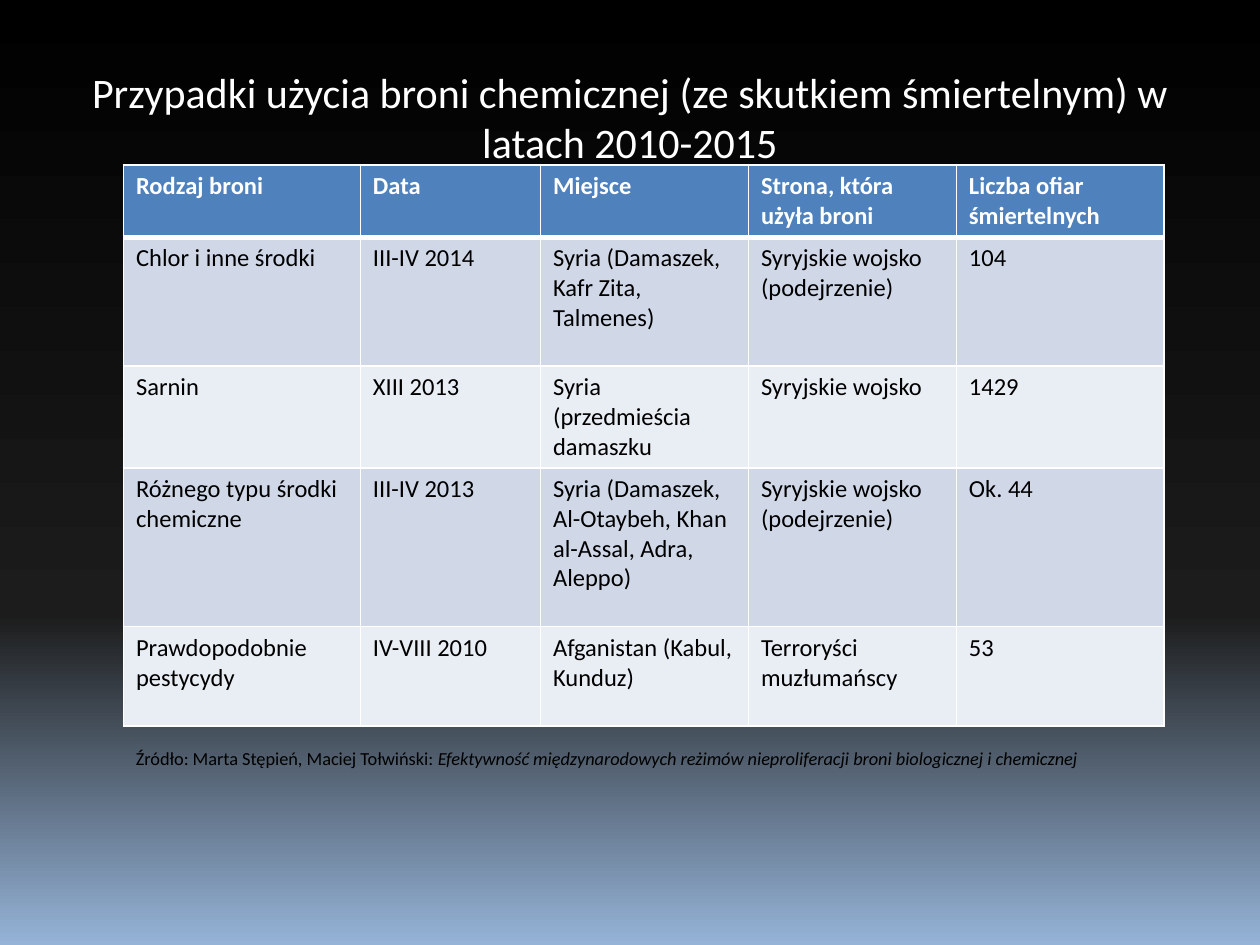
from copy import deepcopy

from lxml.etree import SubElement
from pptx import Presentation
from pptx.dml.color import RGBColor
from pptx.enum.text import MSO_ANCHOR as Anchor, MSO_AUTO_SIZE as AutoSize, PP_ALIGN as Align
from pptx.oxml.ns import qn
from pptx.util import Inches, Pt

FONT = "Calibri"
WHITE, BLACK = "FFFFFF", "000000"
HEADER_FILL = "4F81BD"
BAND_FILLS = ["D0D8E8", "E9EDF4"]
BACKGROUND_STOPS = [(0, BLACK), (0.65, "1C1C1C"), (1, "95B3D7")]

TITLE = "Przypadki użycia broni chemicznej (ze skutkiem śmiertelnym) w latach 2010-2015"
COLUMN_WIDTHS = [1.88, 1.43, 1.65, 1.65, 1.65]
ROW_HEIGHTS = [0.55, 1.02, 0.79, 1.26, 0.79]
CASES = [
    ["Rodzaj broni", "Data", "Miejsce", "Strona, która użyła broni", "Liczba ofiar śmiertelnych"],
    ["Chlor i inne środki", "III-IV 2014", "Syria (Damaszek, Kafr Zita, Talmenes)",
     "Syryjskie wojsko (podejrzenie)", "104"],
    ["Sarnin", "XIII 2013", "Syria (przedmieścia damaszku", "Syryjskie wojsko", "1429"],
    ["Różnego typu środki chemiczne", "III-IV 2013",
     "Syria (Damaszek, Al-Otaybeh, Khan al-Assal, Adra, Aleppo)",
     "Syryjskie wojsko (podejrzenie)", "Ok. 44"],
    ["Prawdopodobnie pestycydy", "IV-VIII 2010", "Afganistan (Kabul, Kunduz)",
     "Terroryści muzłumańscy", "53"],
]
SOURCE_AUTHORS = "Źródło: Marta Stępień, Maciej Tołwiński: "
SOURCE_TITLE = "Efektywność międzynarodowych reżimów nieproliferacji broni biologicznej i chemicznej"


def color(value):
    return RGBColor.from_string(value)


def set_font(font, size, value, bold=False):
    font.name = FONT
    font.size = Pt(size)
    font.bold = bold
    font.color.rgb = color(value)


def paint_background(page):
    fill = page.background.fill
    fill.gradient()
    fill.gradient_angle = 270
    stop_list = page.element.find(".//" + qn("a:gsLst"))
    stop_list.append(deepcopy(stop_list[-1]))
    for stop, (position, value) in zip(fill.gradient_stops, BACKGROUND_STOPS):
        stop.position = position
        stop.color.rgb = color(value)


def place_title(page, left, top, width, height):
    box = page.shapes.title
    box.left, box.top, box.width, box.height = map(Inches, (left, top, width, height))
    frame = box.text_frame
    frame.text = TITLE
    frame.vertical_anchor = Anchor.MIDDLE
    para = frame.paragraphs[0]
    para.alignment = Align.CENTER
    set_font(para.font, 24, WHITE)


def set_borders(cell, top, bottom):
    properties = cell._tc.get_or_add_tcPr()
    for side, width in [("L", 1), ("R", 1), ("T", top), ("B", bottom)]:
        line = SubElement(properties, qn(f"a:ln{side}"), w=str(Pt(width)))
        solid = SubElement(line, qn("a:solidFill"))
        SubElement(solid, qn("a:srgbClr"), val=WHITE)


def place_table(page, left, top, width, height):
    frame = page.shapes.add_table(len(CASES), len(COLUMN_WIDTHS),
                                  *map(Inches, (left, top, width, height)))
    table = frame.table
    for column, size in zip(table.columns, COLUMN_WIDTHS):
        column.width = Inches(size)
    for index, (row, size, texts) in enumerate(zip(table.rows, ROW_HEIGHTS, CASES)):
        row.height = Inches(size)
        is_header = index == 0
        for cell, text in zip(row.cells, texts):
            cell.text = text
            set_font(cell.text_frame.paragraphs[0].font, 14,
                     WHITE if is_header else BLACK, bold=is_header)
            set_borders(cell, top=3 if index == 1 else 1, bottom=3 if is_header else 1)
            cell.fill.solid()
            cell.fill.fore_color.rgb = color(HEADER_FILL if is_header else BAND_FILLS[(index - 1) % 2])


def place_source(page, left, top, width, height):
    box = page.shapes.add_textbox(*map(Inches, (left, top, width, height)))
    frame = box.text_frame
    frame.word_wrap = True
    frame.auto_size = AutoSize.SHAPE_TO_FIT_TEXT
    para = frame.paragraphs[0]
    set_font(para.font, 10.5, BLACK)
    para.add_run().text = SOURCE_AUTHORS
    span = para.add_run()
    span.text = SOURCE_TITLE
    span.font.italic = True


def main():
    deck = Presentation()
    deck.slide_width, deck.slide_height = Inches(10), Inches(7.5)
    page = deck.slides.add_slide(deck.slide_layouts[5])
    paint_background(page)
    place_title(page, 0.5, 0.3, 9, 1.25)
    place_table(page, 0.98, 1.31, sum(COLUMN_WIDTHS), sum(ROW_HEIGHTS))
    place_source(page, 0.98, 5.88, 7.8, 0.28)
    deck.save("out.pptx")


if __name__ == "__main__":
    main()
